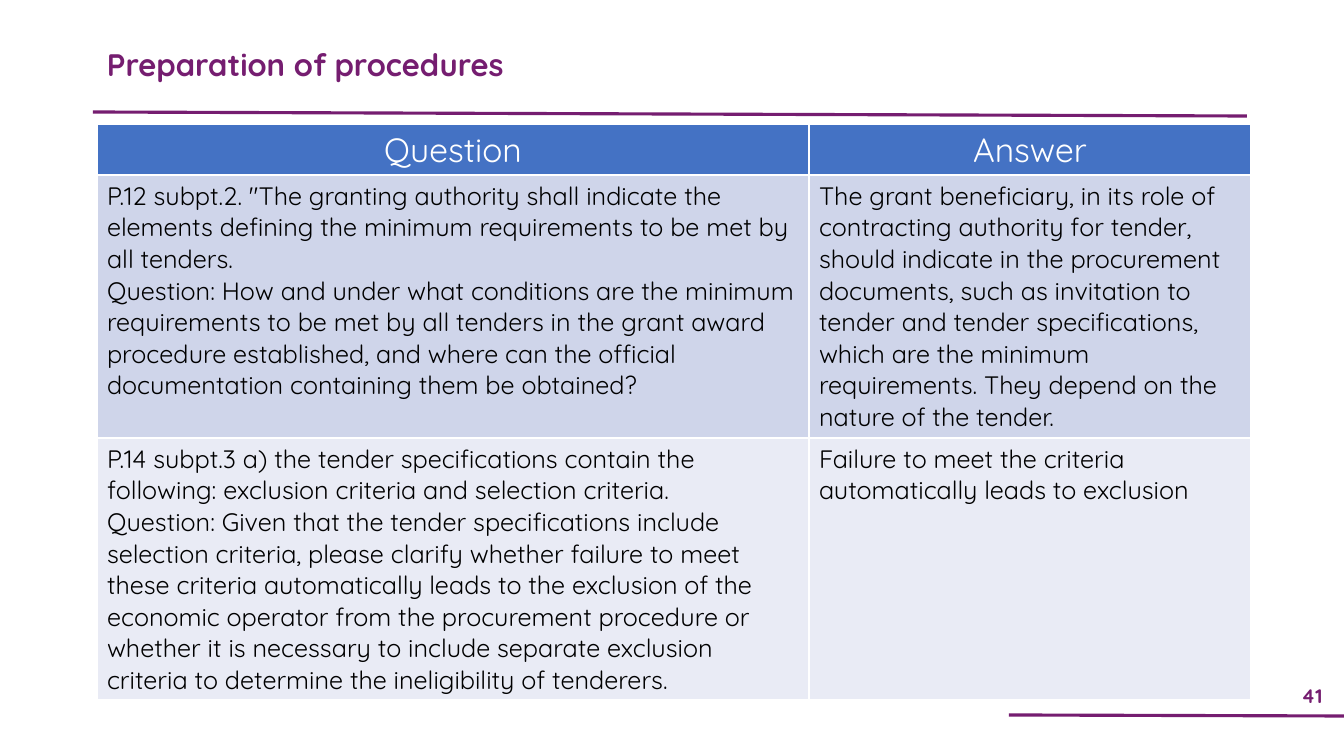
from lxml.etree import SubElement
from pptx import Presentation
from pptx.dml.color import RGBColor
from pptx.enum.shapes import MSO_CONNECTOR
from pptx.enum.text import MSO_ANCHOR, PP_ALIGN
from pptx.oxml.ns import qn
from pptx.util import Pt

PX = 914400 / 100.8
COLORS = {
    "plum": "751D70",
    "header": "4472C4",
    "band_dark": "CFD5EA",
    "band_light": "E9EBF5",
    "white": "FFFFFF",
    "black": "000000",
}


def px(*lengths):
    return [round(length * PX) for length in lengths]


def write(paragraph, text, size, color, bold=False, align=PP_ALIGN.LEFT):
    paragraph.alignment = align
    run = paragraph.add_run()
    run.text = text
    run.font.name = "Quicksand"
    run.font.size = Pt(size)
    run.font.bold = bold
    run.font.color.rgb = RGBColor.from_string(COLORS[color])


prs = Presentation()
prs.slide_width, prs.slide_height = px(1344, 756)
slide = prs.slides.add_slide(prs.slide_layouts[6])

for ends in [(93, 112, 1247, 116), (1009, 715, 1346, 716)]:
    rule = slide.shapes.add_connector(MSO_CONNECTOR.STRAIGHT, *px(*ends))
    rule.line.color.rgb = RGBColor.from_string(COLORS["plum"])
    rule.line.width = Pt(2.25)
    SubElement(rule._element.spPr, qn("a:effectLst"))

page_number = slide.shapes.add_textbox(*px(1280, 678, 64, 36)).text_frame
page_number.word_wrap = True
page_number.vertical_anchor = MSO_ANCHOR.MIDDLE
write(page_number.paragraphs[0], "41", 14, "plum", True, PP_ALIGN.CENTER)

heading = slide.shapes.add_textbox(*px(97, 48, 981, 42)).text_frame
heading.word_wrap = True
heading.paragraphs[0].line_spacing = 0.8
write(heading.paragraphs[0], "Preparation of procedures", 22.2, "plum", True, PP_ALIGN.JUSTIFY)

rows = [
    (51, "header", 24, "white", PP_ALIGN.CENTER, [["Question"], ["Answer"]]),
    (263, "band_dark", 18, "black", PP_ALIGN.LEFT, [
        [
            'P.12 subpt.2. "The granting authority shall indicate the elements defining '
            "the minimum requirements to be met by all tenders.",
            "Question: How and under what conditions are the minimum requirements to be met "
            "by all tenders in the grant award procedure established, and where can the "
            "official documentation containing them be obtained?",
        ],
        [
            "The grant beneficiary, in its role of contracting authority for tender, should "
            "indicate in the procurement documents, such as invitation to tender and tender "
            "specifications, which are the minimum requirements. They depend on the nature "
            "of the tender.",
        ],
    ]),
    (262, "band_light", 18, "black", PP_ALIGN.LEFT, [
        [
            "P.14 subpt.3 a) the tender specifications contain the following: exclusion "
            "criteria and selection criteria.",
            "Question: Given that the tender specifications include selection criteria, please "
            "clarify whether failure to meet these criteria automatically leads to the "
            "exclusion of the economic operator from the procurement procedure or whether it "
            "is necessary to include separate exclusion criteria to determine the "
            "ineligibility of tenderers.",
        ],
        ["Failure to meet the criteria automatically leads to exclusion"],
    ]),
]

questions = slide.shapes.add_table(len(rows), 2, *px(97, 124, 1154, 576)).table
for column, width in zip(questions.columns, px(712, 442)):
    column.width = width

for r, (height, fill, size, color, align, answers) in enumerate(rows):
    questions.rows[r].height = px(height)[0]
    for c, paragraphs in enumerate(answers):
        cell = questions.cell(r, c)
        cell.fill.solid()
        cell.fill.fore_color.rgb = RGBColor.from_string(COLORS[fill])
        for i, text in enumerate(paragraphs):
            frame = cell.text_frame
            paragraph = frame.add_paragraph() if i else frame.paragraphs[0]
            write(paragraph, text, size, color, align=align)

prs.save("out.pptx")
